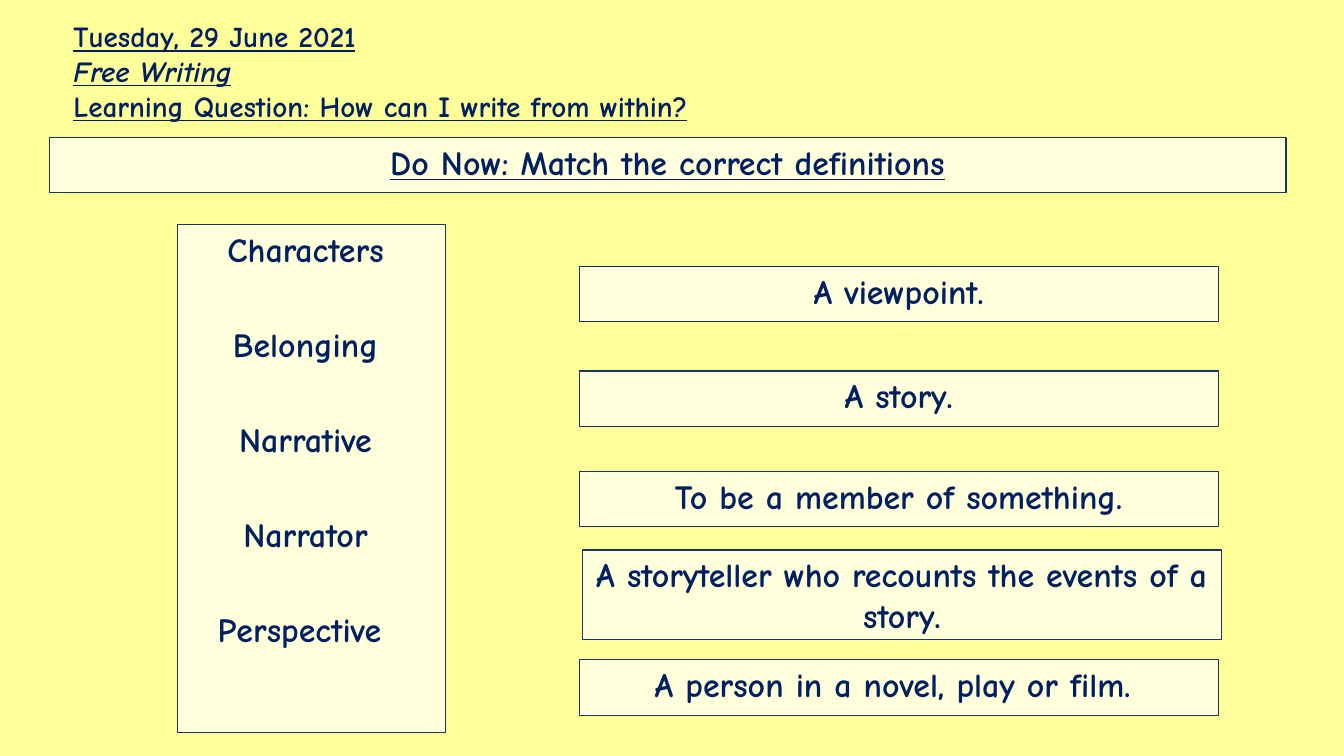
from dataclasses import dataclass

from lxml import etree
from pptx import Presentation
from pptx.dml.color import RGBColor
from pptx.enum.shapes import MSO_SHAPE
from pptx.enum.text import MSO_ANCHOR, MSO_AUTO_SIZE, PP_ALIGN
from pptx.oxml.ns import qn
from pptx.util import Cm, Pt

RECT = MSO_SHAPE.RECTANGLE
TOP, MIDDLE = MSO_ANCHOR.TOP, MSO_ANCHOR.MIDDLE
LEFT, CENTER = PP_ALIGN.LEFT, PP_ALIGN.CENTER
NO_AUTOFIT = MSO_AUTO_SIZE.NONE
TITLE_ONLY = 5


@dataclass(frozen=True)
class Theme:
    font: str = "Comic Neue"
    background: RGBColor = RGBColor(0xFF, 0xFF, 0x99)
    ink: RGBColor = RGBColor(0x00, 0x20, 0x60)
    panel: RGBColor = RGBColor(0xFF, 0xFF, 0xFF)
    panel_alpha: int = 65
    border: RGBColor = RGBColor(0x17, 0x37, 0x5E)
    border_width: float = 0.75
    title_size: float = 20.8
    body_size: float = 24.2
    gap: float = 4.84
    word_gap: float = 38.8


def write(p, text, theme, size, align=CENTER, before=0, underline=False,
          italic=False, indent_right=0):
    """Fill a paragraph with one formatted run."""
    p.alignment = align
    p.space_before = Pt(before)
    if indent_right:
        p._p.get_or_add_pPr().set("marR", str(Cm(indent_right)))
    r = p.add_run()
    r.text = text
    font = r.font
    font.name, font.size, font.bold = theme.font, Pt(size), True
    font.underline, font.italic = underline, italic
    font.color.rgb = theme.ink


class SlideBuilder:
    def __init__(self, prs, theme):
        self.theme = theme
        self.s = prs.slides.add_slide(prs.slide_layouts[TITLE_ONLY])
        fill = self.s.background.fill
        fill.solid()
        fill.fore_color.rgb = theme.background

    def frame(self, sp, anchor, inset_x, inset_y):
        tf = sp.text_frame
        tf.word_wrap = True
        tf.auto_size = NO_AUTOFIT
        tf.vertical_anchor = anchor
        tf.margin_left = tf.margin_right = Cm(inset_x)
        tf.margin_top = tf.margin_bottom = Cm(inset_y)
        return tf

    def lines(self, tf, items, **common):
        """Write one paragraph per (text, format) pair."""
        for i, (text, fmt) in enumerate(items):
            p = tf.add_paragraph() if i else tf.paragraphs[0]
            write(p, text, self.theme, **common, **fmt)

    def title(self, x, y, w, h, items):
        sp = self.s.shapes.title
        sp.left, sp.top, sp.width, sp.height = Cm(x), Cm(y), Cm(w), Cm(h)
        tf = self.frame(sp, MIDDLE, 0.33, 0.18)
        self.lines(tf, items, size=self.theme.title_size, align=LEFT,
                   underline=True)

    def panel(self, x, y, w, h, items, before=None):
        theme = self.theme
        sp = self.s.shapes.add_shape(RECT, Cm(x), Cm(y), Cm(w), Cm(h))
        sp.shadow.inherit = False
        sp.fill.solid()
        sp.fill.fore_color.rgb = theme.panel
        color = sp._element.spPr.find(qn("a:solidFill"))[0]
        alpha = etree.SubElement(color, qn("a:alpha"))
        alpha.set("val", str(theme.panel_alpha * 1000))
        sp.line.color.rgb = theme.border
        sp.line.width = Pt(theme.border_width)
        tf = self.frame(sp, TOP, 0.18, 0.1)
        self.lines(tf, items, size=theme.body_size,
                   before=theme.gap if before is None else before)


TITLE_LINES = [
    ("Tuesday, 29 June 2021", {}),
    ("Free Writing", {"italic": True}),
    ("Learning Question: How can I write from within?", {}),
]
WORDS = [
    ("Characters", {"indent_right": 0.3}),
    ("Belonging", {}),
    ("Narrative", {}),
    ("Narrator", {}),
    ("Perspective", {"indent_right": 0.6}),
]
# left, top, height, text, format
DEFINITIONS = [
    (14.6, 6.71, 1.4, "A viewpoint.", {}),
    (14.6, 9.35, 1.4, "A story.", {}),
    (14.6, 11.88, 1.4, "To be a member of something.", {}),
    (14.68, 13.86, 2.26,
     "A storyteller who recounts the events of a story.", {}),
    (14.6, 16.63, 1.4, "A person in a novel, play or film.",
     {"indent_right": 0.3}),
]


def main():
    prs = Presentation()
    prs.slide_width, prs.slide_height = Cm(33.87), Cm(19.05)
    theme = Theme()
    slide = SlideBuilder(prs, theme)
    slide.title(1.52, 0.48, 30.84, 2.59, TITLE_LINES)
    slide.panel(1.24, 3.46, 31.17, 1.4,
                [("Do Now: Match the correct definitions",
                  {"underline": True})])
    slide.panel(4.47, 5.66, 6.76, 12.8, WORDS, before=theme.word_gap)
    for x, y, h, text, fmt in DEFINITIONS:
        slide.panel(x, y, 16.1, h, [(text, fmt)])
    prs.save("out.pptx")


if __name__ == "__main__":
    main()
